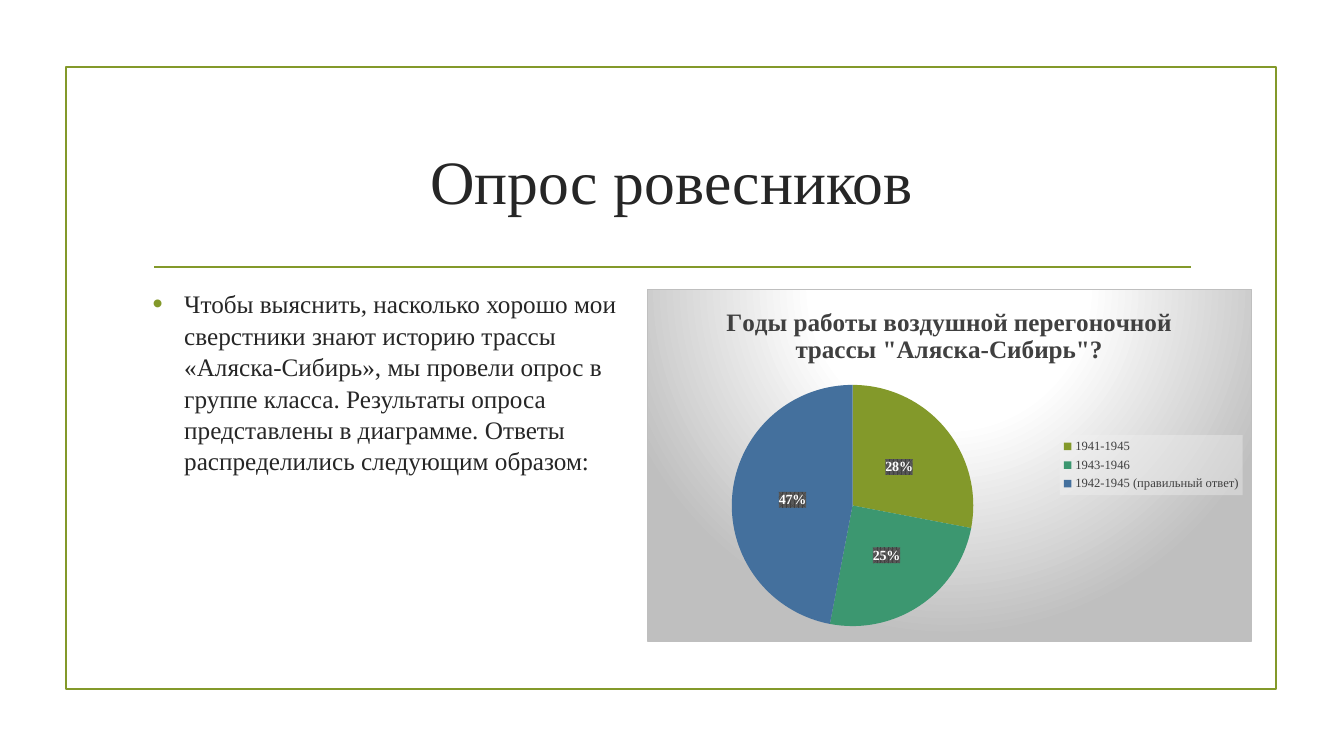
"""Build the survey slide: framed title, introduction and a pie chart of answers."""
from dataclasses import dataclass

from lxml.etree import SubElement
from pptx import Presentation
from pptx.chart.data import CategoryChartData
from pptx.dml.color import RGBColor
from pptx.enum.chart import XL_CHART_TYPE as ChartType
from pptx.enum.chart import XL_LABEL_POSITION as LabelPosition
from pptx.enum.chart import XL_LEGEND_POSITION as LegendPosition
from pptx.enum.shapes import MSO_CONNECTOR as Connector
from pptx.enum.shapes import MSO_SHAPE as Shape
from pptx.enum.text import MSO_ANCHOR as Anchor
from pptx.enum.text import PP_ALIGN as Align
from pptx.oxml import parse_xml
from pptx.oxml.ns import nsdecls, qn
from pptx.util import Emu, Pt

PX = 9525


@dataclass(frozen=True)
class Theme:
    font: str = "Times New Roman"
    accent: str = "83992A"
    ink: str = "262626"
    chart_ink: str = "404040"
    label_back: str = "595959"
    white: str = "FFFFFF"
    grey: str = "BFBFBF"
    legend_back: str = "F2F2F2"
    title_size: int = 44
    body_size: int = 18
    chart_size: int = 10
    legend_size: int = 9
    line_width: float = 1.25


@dataclass(frozen=True)
class Area:
    left: int
    top: int
    width: int
    height: int

    def emu(self) -> tuple:
        return tuple(Emu(side * PX) for side in (self.left, self.top, self.width, self.height))


@dataclass(frozen=True)
class Answer:
    years: str
    percent: int
    color: str


@dataclass(frozen=True)
class TextBlock:
    area: Area
    text: str
    size: int
    align: Align
    anchor: Anchor
    bullet: bool = False


THEME = Theme()
FRAME = Area(63, 64, 1152, 592)
RULE = Area(147, 254, 987, 0)
CHART = Area(616, 275, 576, 336)
QUESTION = 'Годы работы воздушной перегоночной трассы "Аляска-Сибирь"?'
BLOCKS = (
    TextBlock(Area(136, 103, 1008, 137), "Опрос ровесников",
              THEME.title_size, Align.CENTER, Anchor.MIDDLE),
    TextBlock(Area(136, 269, 495, 348),
              "Чтобы выяснить, насколько хорошо мои сверстники знают историю трассы "
              "«Аляска-Сибирь», мы провели опрос в группе класса. Результаты опроса "
              "представлены в диаграмме. Ответы распределились следующим образом:",
              THEME.body_size, Align.LEFT, Anchor.TOP, bullet=True),
)
ANSWERS = (
    Answer("1941-1945", 28, THEME.accent),
    Answer("1943-1946", 25, "3C9770"),
    Answer("1942-1945 (правильный ответ)", 47, "44709D"),
)


def set_font(font, size: int, color: str, bold: bool = False) -> None:
    font.name = THEME.font
    font.size = Pt(size)
    font.bold = bold
    font.color.rgb = RGBColor.from_string(color)


def set_line(line) -> None:
    line.color.rgb = RGBColor.from_string(THEME.accent)
    line.width = Pt(THEME.line_width)


def draw_frame(page) -> None:
    frame = page.shapes.add_shape(Shape.RECTANGLE, *FRAME.emu())
    frame.shadow.inherit = False
    frame.fill.background()
    set_line(frame.line)


def draw_rule(page) -> None:
    left, top, width, height = RULE.emu()
    rule = page.shapes.add_connector(Connector.STRAIGHT, left, top, left + width, top + height)
    set_line(rule.line)
    SubElement(rule.element.spPr, qn("a:effectLst"))


def add_bullet(para) -> None:
    properties = para._p.get_or_add_pPr()
    properties.set("marL", str(30 * PX))
    properties.set("indent", str(-30 * PX))
    color = SubElement(properties, qn("a:buClr"))
    SubElement(color, qn("a:srgbClr"), val=THEME.accent)
    SubElement(properties, qn("a:buSzPct"), val="115000")
    SubElement(properties, qn("a:buFont"), typeface="Arial")
    SubElement(properties, qn("a:buChar"), char="•")


def draw_text(page, block: TextBlock) -> None:
    box = page.shapes.add_textbox(*block.area.emu())
    frame = box.text_frame
    frame.word_wrap = True
    frame.vertical_anchor = block.anchor
    para = frame.paragraphs[0]
    para.text = block.text
    para.alignment = block.align
    if block.bullet:
        para.line_spacing = 1.04
        para.space_after = Pt(6)
        add_bullet(para)
    set_font(para.font, block.size, THEME.ink)


def add_fill(chart, parent: str, fill: str) -> None:
    text_style = chart.element.xpath(f"{parent}/c:txPr")[0]
    text_style.addprevious(parse_xml(f'<c:spPr {nsdecls("c", "a")}>{fill}</c:spPr>'))


def color_xml(color: str, inner: str = "") -> str:
    return f'<a:srgbClr val="{color}">{inner}</a:srgbClr>'


def style_backgrounds(chart) -> None:
    stops = "".join(f'<a:gs pos="{place * 1000}">{color_xml(color)}</a:gs>'
                    for place, color in ((0, THEME.white), (39, THEME.white), (100, THEME.grey)))
    add_fill(chart, ".", f'<a:gradFill><a:gsLst>{stops}</a:gsLst><a:path path="circle">'
             '<a:fillToRect l="50000" t="-80000" r="50000" b="180000"/></a:path></a:gradFill>'
             f'<a:ln w="9525"><a:solidFill>{color_xml(THEME.grey)}</a:solidFill></a:ln>')
    translucent = color_xml(THEME.legend_back, '<a:alpha val="39000"/>')
    add_fill(chart, ".//c:legend", f"<a:solidFill>{translucent}</a:solidFill>")
    add_fill(chart, ".//c:dLbls", f'<a:pattFill prst="pct75"><a:fgClr>{color_xml(THEME.chart_ink)}'
             f"</a:fgClr><a:bgClr>{color_xml(THEME.label_back)}</a:bgClr></a:pattFill>")


def place_pie(chart) -> None:
    plot_area = chart.element.xpath(".//c:plotArea")[0]
    for old in plot_area.findall(qn("c:layout")):
        plot_area.remove(old)
    sides = "".join(f'<c:{name} val="{share}"/>'
                    for name, share in (("x", 0.14), ("y", 0.27), ("w", 0.4), ("h", 0.69)))
    plot_area.insert(0, parse_xml(
        f'<c:layout {nsdecls("c")}><c:manualLayout><c:layoutTarget val="inner"/>'
        f'<c:xMode val="edge"/><c:yMode val="edge"/>{sides}</c:manualLayout></c:layout>'))


def draw_chart(page) -> None:
    data = CategoryChartData()
    data.categories = [answer.years for answer in ANSWERS]
    data.add_series(QUESTION, [answer.percent for answer in ANSWERS])
    chart = page.shapes.add_chart(ChartType.PIE, *CHART.emu(), data).chart
    set_font(chart.font, THEME.chart_size, THEME.chart_ink)
    chart.has_title = True
    heading = chart.chart_title.text_frame.paragraphs[0]
    heading.text = QUESTION
    set_font(heading.font, THEME.body_size, THEME.chart_ink, bold=True)
    chart.has_legend = True
    chart.legend.position = LegendPosition.RIGHT
    chart.legend.include_in_layout = False
    set_font(chart.legend.font, THEME.legend_size, THEME.chart_ink)
    plot = chart.plots[0]
    plot.vary_by_categories = True
    series = plot.series[0]
    for index, answer in enumerate(ANSWERS):
        slice_format = series.points[index].format
        slice_format.fill.solid()
        slice_format.fill.fore_color.rgb = RGBColor.from_string(answer.color)
        slice_format.line.fill.background()
    labels = series.data_labels
    labels.show_percentage = True
    labels.show_value = False
    labels.number_format = "0%"
    labels.number_format_is_linked = False
    labels.position = LabelPosition.CENTER
    set_font(labels.font, THEME.chart_size, THEME.white, bold=True)
    style_backgrounds(chart)
    place_pie(chart)


def main() -> None:
    deck = Presentation()
    deck.slide_width, deck.slide_height = Emu(1280 * PX), Emu(720 * PX)
    page = deck.slides.add_slide(deck.slide_layouts[6])
    draw_frame(page)
    draw_rule(page)
    for block in BLOCKS:
        draw_text(page, block)
    draw_chart(page)
    deck.save("out.pptx")


if __name__ == "__main__":
    main()
